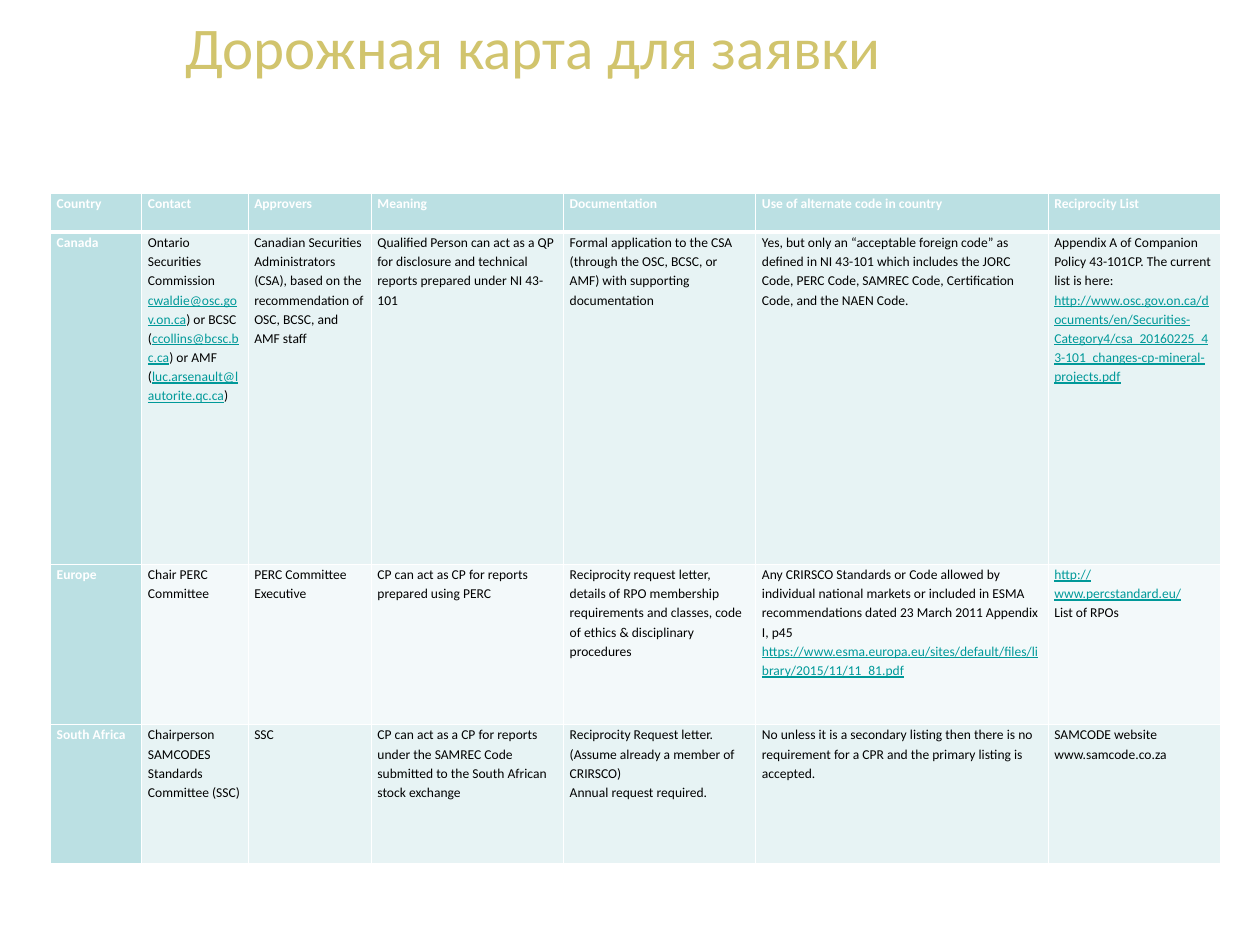
from lxml.etree import SubElement
from pptx import Presentation
from pptx.dml.color import RGBColor
from pptx.oxml.ns import qn
from pptx.util import Inches, Pt

COLUMN_WIDTHS = [1.03, 1.2, 1.39, 2.17, 2.17, 3.3, 1.95]
ROW_HEIGHTS = [0.44, 3.75, 1.81, 1.57]
HEADING_FILL = "BBE0E3"
BAND_FILLS = ["F3F9FA", "E7F3F4"]
LINK_MARK = "|"

ROWS = [
    ["Country", "Contact", "Approvers", "Meaning", "Documentation",
     "Use of alternate code in country", "Reciprocity List"],
    ["Canada",
     "Ontario Securities Commission |cwaldie@osc.gov.on.ca|) or BCSC (|ccollins@bcsc.bc.ca|"
     ") or AMF (|luc.arsenault@lautorite.qc.ca|)",
     "Canadian Securities Administrators (CSA), based on the recommendation of OSC, BCSC, "
     "and AMF staff",
     "Qualified Person can act as a QP for disclosure and technical reports prepared under "
     "NI 43-101",
     "Formal application to the CSA (through the OSC, BCSC, or AMF) with supporting "
     "documentation",
     "Yes, but only an “acceptable foreign code” as defined in NI 43-101 which includes the "
     "JORC Code, PERC Code, SAMREC Code, Certification Code, and the NAEN Code.",
     "Appendix A of Companion Policy 43-101CP. The current list is here: "
     "|http://www.osc.gov.on.ca/documents/en/Securities-Category4/"
     "csa_20160225_43-101_changes-cp-mineral-projects.pdf|"],
    ["Europe",
     "Chair PERC Committee",
     "PERC Committee Executive",
     "CP can act as CP for reports prepared using PERC",
     "Reciprocity request letter, details of RPO membership requirements and classes, code "
     "of ethics & disciplinary procedures",
     "Any CRIRSCO Standards or Code allowed by individual national markets or included in "
     "ESMA recommendations dated 23 March 2011 Appendix I, p45 "
     "|https://www.esma.europa.eu/sites/default/files/library/2015/11/11_81.pdf|",
     "|http://www.percstandard.eu/|\nList of RPOs"],
    ["South Africa",
     "Chairperson SAMCODES Standards Committee (SSC)",
     "SSC",
     "CP can act as a CP for reports under the SAMREC Code submitted to the South African "
     "stock exchange",
     "Reciprocity Request letter. (Assume already a member of CRIRSCO)\n"
     "Annual request required.",
     "No unless it is a secondary listing then there is no requirement for a CPR and the "
     "primary listing is accepted.",
     "SAMCODE website\nwww.samcode.co.za"],
]


def color(value):
    return RGBColor.from_string(value)


class RoadmapSlide:
    heading = {"size": Pt(11), "bold": True, "underline": False, "color": "FFFFFF"}
    body = {"size": Pt(11), "bold": False, "underline": False, "color": "000000"}
    link = {"size": Pt(11), "bold": False, "underline": True, "color": "009999"}
    title_format = {"size": Pt(48), "bold": False, "color": "D1C46D"}

    def __init__(self, deck):
        self.page = deck.slides.add_slide(deck.slide_layouts[6])

    def span(self, para, text, style):
        span = para.add_run()
        span.text = text
        span.font.name = "Calibri"
        for name, value in style.items():
            if name == "color":
                span.font.color.rgb = color(value)
            else:
                setattr(span.font, name, value)

    def title(self, text, left, top, width, height):
        box = self.page.shapes.add_textbox(
            Inches(left), Inches(top), Inches(width), Inches(height))
        box.text_frame.word_wrap = True
        self.span(box.text_frame.paragraphs[0], text, self.title_format)

    def border(self, cell, side, points):
        line = SubElement(cell._tc.get_or_add_tcPr(), qn(f"a:ln{side}"), w=str(Pt(points)))
        fill = SubElement(line, qn("a:solidFill"))
        SubElement(fill, qn("a:srgbClr"), val="FFFFFF")

    def cell(self, cell, text, style, fill, top_line, bottom_line):
        margins = {"margin_left": Inches(0.07), "margin_right": Inches(0.07),
                   "margin_top": 0, "margin_bottom": 0}
        for name, value in margins.items():
            setattr(cell, name, value)
        for side, points in {"L": 1, "R": 1, "T": top_line, "B": bottom_line}.items():
            self.border(cell, side, points)
        cell.fill.solid()
        cell.fill.fore_color.rgb = color(fill)
        frame = cell.text_frame
        for index, line in enumerate(text.split("\n")):
            para = frame.add_paragraph() if index else frame.paragraphs[0]
            para.line_spacing = 1.15
            for part, words in enumerate(line.split(LINK_MARK)):
                if words:
                    self.span(para, words, self.link if part % 2 else style)

    def table(self, rows, left, top):
        table = self.page.shapes.add_table(
            len(rows), len(COLUMN_WIDTHS), Inches(left), Inches(top),
            Inches(sum(COLUMN_WIDTHS)), Inches(sum(ROW_HEIGHTS))).table
        for column, width in zip(table.columns, COLUMN_WIDTHS):
            column.width = Inches(width)
        for row, height in zip(table.rows, ROW_HEIGHTS):
            row.height = Inches(height)
        for r, texts in enumerate(rows):
            for c, text in enumerate(texts):
                is_heading = r == 0 or c == 0
                self.cell(table.cell(r, c), text,
                          self.heading if is_heading else self.body,
                          HEADING_FILL if is_heading else BAND_FILLS[r % 2],
                          top_line=3 if r == 1 else 1,
                          bottom_line=3 if r == 0 else 1)


def main():
    deck = Presentation()
    deck.slide_width = Inches(14.22)
    deck.slide_height = Inches(10.67)
    roadmap = RoadmapSlide(deck)
    roadmap.table(ROWS, 0.57, 2.18)
    roadmap.title("Дорожная карта для заявки", 1.99, 0.07, 12.16, 1.43)
    deck.save("out.pptx")


if __name__ == "__main__":
    main()
